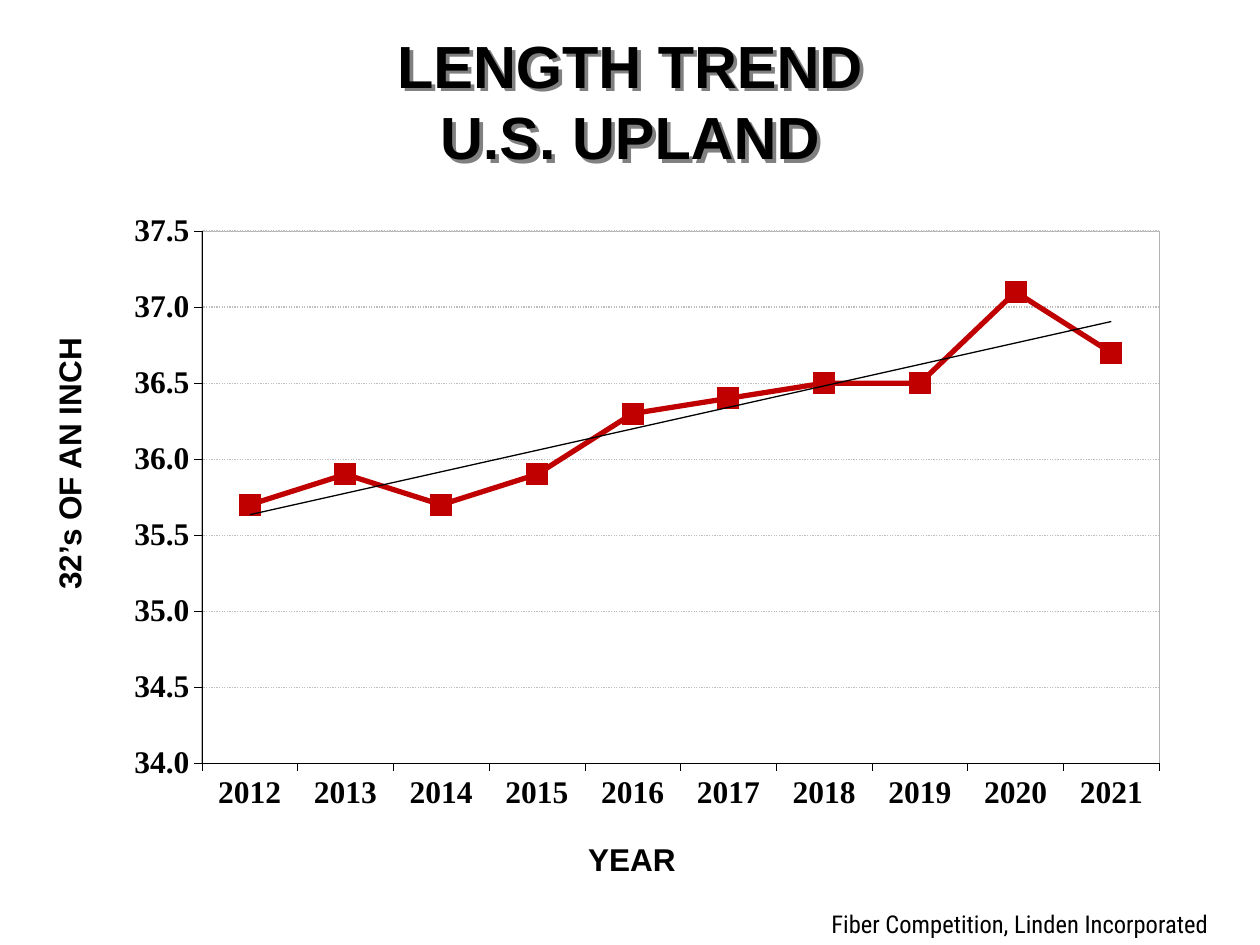
from lxml import etree
from pptx import Presentation
from pptx.chart.data import CategoryChartData
from pptx.dml.color import RGBColor
from pptx.enum.chart import XL_CHART_TYPE, XL_MARKER_STYLE, XL_TICK_MARK
from pptx.enum.dml import MSO_LINE
from pptx.enum.text import MSO_ANCHOR, PP_ALIGN
from pptx.oxml import parse_xml
from pptx.oxml.ns import nsdecls, qn
from pptx.util import Cm, Pt

LINE_MARKERS = XL_CHART_TYPE.LINE_MARKERS
SQUARE = XL_MARKER_STYLE.SQUARE
OUTSIDE = XL_TICK_MARK.OUTSIDE
DOTTED = MSO_LINE.ROUND_DOT
MIDDLE, TOP = MSO_ANCHOR.MIDDLE, MSO_ANCHOR.TOP
CENTER, LEFT = PP_ALIGN.CENTER, PP_ALIGN.LEFT

BLACK, GRAY, LIGHT_GRAY, RED = "000000", "B3B3B3", "BFBFBF", "C00000"
SHADOW = "808080"
YEARS = [str(year) for year in range(2012, 2022)]
LENGTHS = [35.7, 35.9, 35.7, 35.9, 36.3, 36.4, 36.5, 36.5, 37.1, 36.7]
PLOT_BOX = (3.38, 3.85, 19.3, 10.73)


def color(hex_value):
    """Return the colour of a hex string."""
    return RGBColor.from_string(hex_value)


def style_font(font, name, size, bold=False):
    """Set a black font of the given face and size."""
    font.name, font.size, font.bold = name, Pt(size), bold
    font.color.rgb = color(BLACK)


def add_label(slide, box, lines, name, size, bold=False, margin=0.0,
              wrap=True, align=LEFT, anchor=TOP):
    """Add a text box whose lines share one paragraph and return it."""
    label = slide.shapes.add_textbox(*(Cm(length) for length in box))
    frame = label.text_frame
    frame.word_wrap = wrap
    frame.vertical_anchor = anchor
    frame.margin_left = frame.margin_right = Cm(margin)
    frame.margin_top = frame.margin_bottom = Cm(margin / 2)
    paragraph = frame.paragraphs[0]
    paragraph.alignment = align
    for index, line in enumerate(lines):
        if index:
            paragraph.add_line_break()
        run = paragraph.add_run()
        run.text = line
        style_font(run.font, name, size, bold)
    return label


def add_heading(slide, box):
    """Add the two-line heading with shadowed letters."""
    heading = add_label(slide, box, ["LENGTH TREND", "U.S. UPLAND"], "Arial", 34,
                        bold=True, margin=0.25, align=CENTER, anchor=MIDDLE)
    heading._element.spPr.append(parse_xml(
        f'<a:effectLst {nsdecls("a")}><a:outerShdw dist="{Pt(3)}" dir="2700000">'
        f'<a:srgbClr val="{SHADOW}"/></a:outerShdw></a:effectLst>'))


def style_axis(axis):
    """Give an axis its line, ticks and bold labels."""
    axis.major_tick_mark = OUTSIDE
    axis.format.line.color.rgb = color(BLACK)
    axis.format.line.width = Pt(0.25)
    style_font(axis.tick_labels.font, "Times New Roman", 18, bold=True)


def line_xml(hex_value, width):
    """Return the XML of shape properties with no fill and a plain line."""
    return (f'<c:spPr {nsdecls("c", "a")}><a:noFill/><a:ln w="{Pt(width)}"><a:solidFill>'
            f'<a:srgbClr val="{hex_value}"/></a:solidFill></a:ln></c:spPr>')


def frame_plot(chart, width, height):
    """Fix the inner plot area in a chart of the given size and draw its border."""
    plot_area = chart._chartSpace.chart.plotArea
    for layout in plot_area.findall(qn("c:layout")):
        plot_area.remove(layout)
    layout = parse_xml(f'<c:layout {nsdecls("c")}><c:manualLayout/></c:layout>')
    settings = {"layoutTarget": "inner", "xMode": "edge", "yMode": "edge"}
    for tag, length, whole in zip("xywh", PLOT_BOX, (width, height) * 2):
        settings[tag] = length / whole
    for tag, value in settings.items():
        etree.SubElement(layout[0], qn(f"c:{tag}")).set("val", str(value))
    plot_area.insert(0, layout)
    plot_area.append(parse_xml(line_xml(GRAY, 0.75)))


def add_trend_line(series):
    """Add a thin linear trend line to a series."""
    trend = parse_xml(
        f'<c:trendline {nsdecls("c")}>{line_xml(BLACK, 0.75)}<c:trendlineType val="linear"/>'
        '<c:dispRSqr val="0"/><c:dispEq val="0"/></c:trendline>')
    series._element.find(qn("c:cat")).addprevious(trend)


def add_length_chart(slide, box):
    """Add the line chart of fiber length by year."""
    data = CategoryChartData(number_format="0.0")
    data.categories = YEARS
    data.add_series("Series 1", LENGTHS)
    chart = slide.shapes.add_chart(
        LINE_MARKERS, *(Cm(length) for length in box), data).chart
    chart.has_title = chart.has_legend = False
    style_font(chart.font, "Times New Roman", 10)
    chart.plots[0].vary_by_categories = False

    style_axis(chart.category_axis)
    lengths = chart.value_axis
    style_axis(lengths)
    lengths.minimum_scale, lengths.maximum_scale, lengths.major_unit = 34, 37.5, 0.5
    lengths.tick_labels.number_format = "0.0"
    lengths.tick_labels.number_format_is_linked = False
    grid = lengths.major_gridlines.format.line
    grid.color.rgb = color(LIGHT_GRAY)
    grid.width = Pt(0.75)
    grid.dash_style = DOTTED

    yearly = chart.plots[0].series[0]
    yearly.smooth = False
    yearly.format.line.color.rgb = color(RED)
    yearly.format.line.width = Pt(3)
    yearly.marker.style, yearly.marker.size = SQUARE, 12
    yearly.marker.format.fill.solid()
    yearly.marker.format.fill.fore_color.rgb = color(RED)
    yearly.marker.format.line.color.rgb = color(RED)
    add_trend_line(yearly)
    frame_plot(chart, *box[2:])


def add_axis_names(slide, box):
    """Name the two axes of the chart that fills the box."""
    left, top, _, _ = box
    unit = add_label(slide, (left - 1.86, top + 8.16, 5.11, 0.76),
                     ["32’s OF AN INCH"], "Arial", 18, bold=True,
                     wrap=False, align=CENTER)
    unit.rotation = 270
    add_label(slide, (left + 10.8, top + 16.13, 2.5, 0.76),
              ["YEAR"], "Arial", 18, bold=True, wrap=False, align=CENTER)


def main():
    """Build the slide and save it."""
    deck = Presentation()
    deck.slide_width, deck.slide_height = Cm(25.4), Cm(19.05)
    slide = deck.slides.add_slide(deck.slide_layouts[6])
    chart_box = (0.69, 0.81, 24.03, 17.42)
    add_length_chart(slide, chart_box)
    add_heading(slide, (1.9, 0.43, 21.6, 3.18))
    add_axis_names(slide, chart_box)
    add_label(slide, (16.51, 18.21, 8.89, 0.84),
              ["Fiber Competition, Linden Incorporated"],
              "Roboto Condensed", 14, margin=0.25)
    deck.save("out.pptx")


if __name__ == "__main__":
    main()
